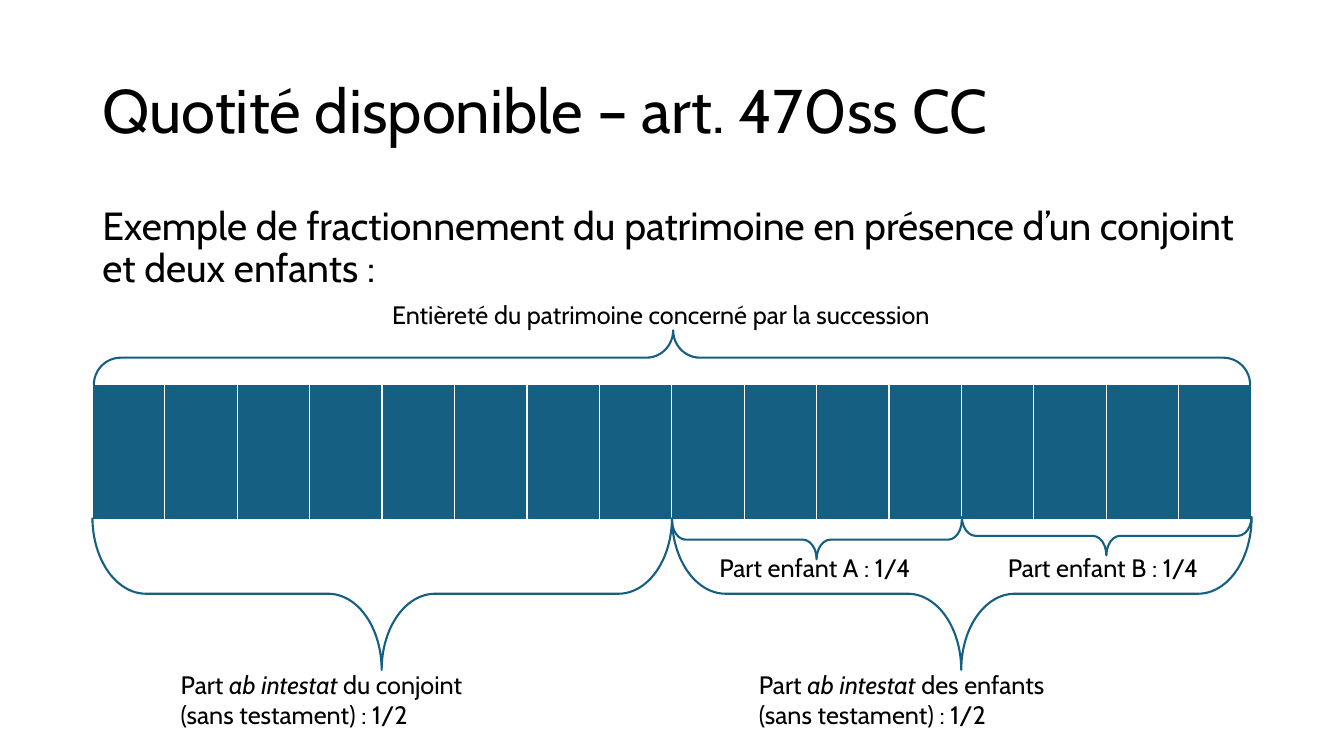
from dataclasses import dataclass

from lxml import etree
from pptx import Presentation
from pptx import util as u
from pptx.dml.color import RGBColor
from pptx.enum import shapes, text
from pptx.oxml import ns


@dataclass(frozen=True)
class Theme:
    font: str = "Cabin"
    ink: str = "000000"
    accent: str = "156082"
    border: str = "FFFFFF"
    title_size: float = 44
    body_size: float = 28
    label_size: float = 18


class SlideBuilder:
    def __init__(self, presentation, theme):
        self.theme = theme
        self.slide = presentation.slides.add_slide(presentation.slide_layouts[5])

    def fill_text(self, frame, lines, size, line_spacing=1.0, space_before=0):
        frame.word_wrap = True
        frame.auto_size = text.MSO_AUTO_SIZE.NONE
        for index, line in enumerate(lines):
            paragraph = frame.paragraphs[0] if index == 0 else frame.add_paragraph()
            paragraph.alignment = text.PP_ALIGN.LEFT
            paragraph.line_spacing = line_spacing
            paragraph.space_before = u.Pt(space_before)
            paragraph.font.name = self.theme.font
            paragraph.font.size = u.Pt(size)
            paragraph.font.color.rgb = RGBColor.from_string(self.theme.ink)
            for position, part in enumerate(line.split("*")):
                run = paragraph.add_run()
                run.text = part
                if position % 2:
                    run.font.italic = True

    def title(self, left, top, width, height, wording):
        shape = self.slide.shapes.title
        shape.left, shape.top = u.Pt(left), u.Pt(top)
        shape.width, shape.height = u.Pt(width), u.Pt(height)
        shape.text_frame.vertical_anchor = text.MSO_ANCHOR.MIDDLE
        self.fill_text(shape.text_frame, [wording], self.theme.title_size, 0.9)

    def textbox(self, left, top, width, height, lines, size=None, **spacing):
        shape = self.slide.shapes.add_textbox(
            u.Pt(left), u.Pt(top), u.Pt(width), u.Pt(height))
        self.fill_text(
            shape.text_frame, lines, size or self.theme.label_size, **spacing)

    def brace(self, left, top, width, height, rotation, curve):
        center_x, center_y = left + width / 2, top + height / 2
        shape = self.slide.shapes.add_shape(
            shapes.MSO_SHAPE.RIGHT_BRACE,
            u.Pt(center_x - height / 2), u.Pt(center_y - width / 2),
            u.Pt(height), u.Pt(width))
        shape.rotation = rotation
        shape.adjustments[0] = curve
        shape.adjustments[1] = 0.501
        shape.shadow.inherit = False
        shape.fill.background()
        shape.line.color.rgb = RGBColor.from_string(self.theme.accent)
        shape.line.width = u.Pt(1.5)

    def bar(self, left, top, width, height, parts):
        table = self.slide.shapes.add_table(
            1, parts, u.Pt(left), u.Pt(top), u.Pt(width), u.Pt(height)).table
        for column in table.columns:
            column.width = u.Pt(width / parts)
        for cell in table.iter_cells():
            self.borders(cell)
            cell.fill.solid()
            cell.fill.fore_color.rgb = RGBColor.from_string(self.theme.accent)

    def borders(self, cell):
        properties = cell._tc.get_or_add_tcPr()
        for side, weight in (("L", 1), ("R", 1), ("T", 1), ("B", 3)):
            line = etree.SubElement(
                properties, ns.qn(f"a:ln{side}"), w=str(u.Pt(weight)))
            fill = etree.SubElement(line, ns.qn("a:solidFill"))
            etree.SubElement(fill, ns.qn("a:srgbClr"), val=self.theme.border)


def main():
    presentation = Presentation()
    presentation.slide_width, presentation.slide_height = u.Pt(960), u.Pt(540)
    theme = Theme()
    builder = SlideBuilder(presentation, theme)

    left, width = 66, 828
    half, quarter = width / 2, width / 4
    middle = left + half

    builder.title(left, 28.75, width, 104.4, "Quotité disponible – art. 470ss CC")
    builder.textbox(
        left, 143.75, width, 342.6,
        ["Exemple de fractionnement du patrimoine en présence d’un conjoint "
         "et deux enfants :"],
        theme.body_size, line_spacing=0.9, space_before=10)

    builder.bar(left, 274.5, width, 97.9, 16)
    builder.brace(left + 1, 236, width - 2, 39, 270, 0.491)
    builder.textbox(273, 210.4, 413, 29,
                    ["Entièreté du patrimoine concerné par la succession"])

    heirs = ((left, 122, 300, "du conjoint"), (middle, 535, 311, "des enfants"))
    for start, label_left, label_width, heir in heirs:
        builder.brace(start, 369.75, half, 108.75, 90, 0.351)
        builder.textbox(label_left, 474.5, label_width, 51,
                        [f"Part *ab intestat* {heir}", "(sans testament) : 1/2"])

    children = (("A", 371.5, 506.75), ("B", 368.75, 712.75))
    for index, (child, top, label_left) in enumerate(children):
        builder.brace(middle + index * quarter, top, quarter, 28, 90, 0.351)
        builder.textbox(label_left, 391, 154, 29, [f"Part enfant {child} : 1/4"])

    presentation.save("out.pptx")


if __name__ == "__main__":
    main()
